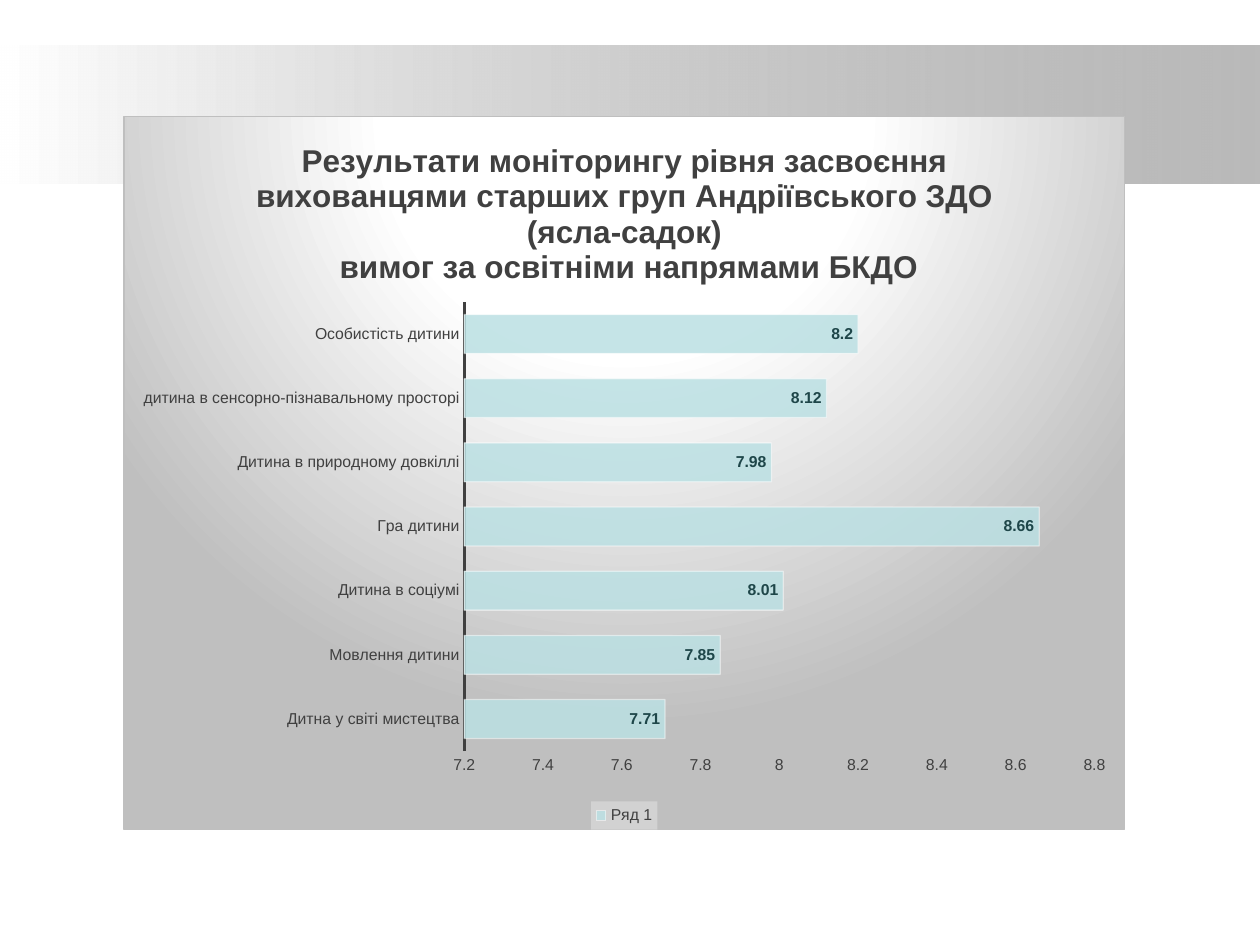
from pptx import Presentation
from pptx.chart.data import CategoryChartData
from pptx.dml.color import RGBColor
from pptx.enum.chart import XL_CHART_TYPE, XL_LABEL_POSITION, XL_LEGEND_POSITION, XL_TICK_MARK
from pptx.enum.shapes import MSO_SHAPE
from pptx.oxml import parse_xml
from pptx.oxml.ns import nsdecls
from pptx.util import Inches, Pt

BAR_CLUSTERED = XL_CHART_TYPE.BAR_CLUSTERED
INSIDE_END = XL_LABEL_POSITION.INSIDE_END
BOTTOM = XL_LEGEND_POSITION.BOTTOM
NO_TICK = XL_TICK_MARK.NONE
RECTANGLE = MSO_SHAPE.RECTANGLE

WIDTH, HEIGHT = Inches(10), Inches(7.5)
FONT = "Arial"
DARK, WHITE, GREY = "404040", "FFFFFF", "BFBFBF"
LINEAR = '<a:lin ang="0" scaled="0"/>'
RADIAL = ('<a:path path="circle"><a:fillToRect l="50000" t="-80000" '
          'r="50000" b="180000"/></a:path>')
TITLE = [
    "Результати моніторингу рівня засвоєння вихованцями старших груп "
    "Андріївського ЗДО (ясла-садок)",
    " вимог за освітніми напрямами БКДО",
]
RESULTS = {
    "Дитна у світі мистецтва": 7.71,
    "Мовлення дитини": 7.85,
    "Дитина в соціумі": 8.01,
    "Гра дитини": 8.66,
    "Дитина в природному довкіллі": 7.98,
    "дитина в сенсорно-пізнавальному просторі": 8.12,
    "Особистість дитини": 8.2,
}


def color(code):
    """Turn a hex string into a colour."""
    return RGBColor.from_string(code)


def style_font(font, size, code=DARK, bold=False):
    """Set typeface, size, colour and weight."""
    font.name, font.size, font.bold = FONT, Pt(size), bold
    font.color.rgb = color(code)


def gradient(stops, direction):
    """Return gradient fill XML from (position, colour, opacity) stops."""
    marks = "".join(
        f'<a:gs pos="{place * 1000}"><a:srgbClr val="{code}">'
        f'<a:alpha val="{opacity * 1000}"/></a:srgbClr></a:gs>'
        for place, code, opacity in stops)
    return (f'<a:gradFill {nsdecls("a")} rotWithShape="1">'
            f'<a:gsLst>{marks}</a:gsLst>{direction}</a:gradFill>')


def solid(code, opacity):
    """Return solid fill XML with an opacity in percent."""
    return (f'<a:solidFill {nsdecls("a")}><a:srgbClr val="{code}">'
            f'<a:alpha val="{opacity * 1000}"/></a:srgbClr></a:solidFill>')


def area_format(fill, line=""):
    """Return a chart part's shape properties."""
    return parse_xml(f'<c:spPr {nsdecls("c", "a")}>{fill}{line}</c:spPr>')


def outline(code, opacity=100):
    """Return XML for a thin line."""
    return f'<a:ln {nsdecls("a")} w="9525">{solid(code, opacity)}</a:ln>'


def add_band(page):
    """Add the fading band across the top."""
    band = page.shapes.add_shape(RECTANGLE, 0, Inches(0.36), WIDTH, Inches(1.1))
    band.shadow.inherit = False
    band.line.fill.background()
    band.fill.background()
    properties = band._element.spPr
    empty = properties.find("{*}noFill")
    stops = [(0, WHITE, 100), (100, "808080", 54)]
    properties.replace(empty, parse_xml(gradient(stops, LINEAR)))


def add_chart(page):
    """Add the bar chart of results."""
    data = CategoryChartData(number_format="General")
    data.categories = list(RESULTS)
    data.add_series("Ряд 1", list(RESULTS.values()))
    frame = page.shapes.add_chart(
        BAR_CLUSTERED, Inches(0.98), Inches(0.92), Inches(7.95), Inches(5.67), data)
    chart = frame.chart
    style_font(chart.font, 10, "000000")
    stops = [(0, WHITE, 100), (39, WHITE, 100), (100, GREY, 100)]
    chart._chartSpace.find("{*}chart").addnext(
        area_format(gradient(stops, RADIAL), outline(GREY)))
    return chart


def style_title(chart):
    """Write the chart title."""
    chart.has_title = True
    chart.chart_title.include_in_layout = False
    frame = chart.chart_title.text_frame
    for index, line in enumerate(TITLE):
        para = frame.add_paragraph() if index else frame.paragraphs[0]
        span = para.add_run()
        span.text = line
        style_font(span.font, 18, bold=True)


def style_axes(chart):
    """Format both axes and set the value scale."""
    for axis in (chart.category_axis, chart.value_axis):
        axis.major_tick_mark = axis.minor_tick_mark = NO_TICK
        axis.has_major_gridlines = False
        style_font(axis.tick_labels.font, 9)
    line = chart.category_axis.format.line
    line.color.rgb, line.width = color(DARK), Pt(1.5)
    scale = chart.value_axis
    scale.minimum_scale, scale.maximum_scale, scale.major_unit = 7.2, 8.8, 0.2
    scale.format.line.fill.background()


def style_bars(chart):
    """Format the bars and their value labels."""
    plot = chart.plots[0]
    plot.gap_width, plot.vary_by_categories = 65, False
    series = plot.series[0]
    series.invert_if_negative = False
    properties = series._element.get_or_add_spPr()
    properties.append(parse_xml(solid("BBE0E3", 85)))
    properties.append(parse_xml(outline(WHITE, 50)))
    labels = series.data_labels
    labels.show_value, labels.position = True, INSIDE_END
    style_font(labels.font, 9, "1E4649", bold=True)


def style_legend(chart):
    """Place the legend below on a pale ground."""
    chart.has_legend = True
    legend = chart.legend
    legend.position, legend.include_in_layout = BOTTOM, False
    style_font(legend.font, 9)
    legend._element.find("{*}txPr").addprevious(area_format(solid("F2F2F2", 39)))


def place_plot(chart, left, top, width, height):
    """Place the inner plot area by shares of the chart size."""
    area = chart._chartSpace.find("{*}chart/{*}plotArea")
    for old in area.findall("{*}layout"):
        area.remove(old)
    sizes = "".join(f'<c:{name} val="{share}"/>' for name, share in
                    zip("xywh", (left, top, width, height)))
    area.insert(0, parse_xml(
        f'<c:layout {nsdecls("c")}><c:manualLayout><c:layoutTarget val="inner"/>'
        f'<c:xMode val="edge"/><c:yMode val="edge"/>{sizes}'
        '</c:manualLayout></c:layout>'))


def main():
    """Build and save the slide."""
    deck = Presentation()
    deck.slide_width, deck.slide_height = WIDTH, HEIGHT
    page = deck.slides.add_slide(deck.slide_layouts[6])
    add_band(page)
    chart = add_chart(page)
    style_title(chart)
    style_axes(chart)
    style_bars(chart)
    style_legend(chart)
    place_plot(chart, 0.34, 0.26, 0.63, 0.63)
    deck.save("out.pptx")


if __name__ == "__main__":
    main()
